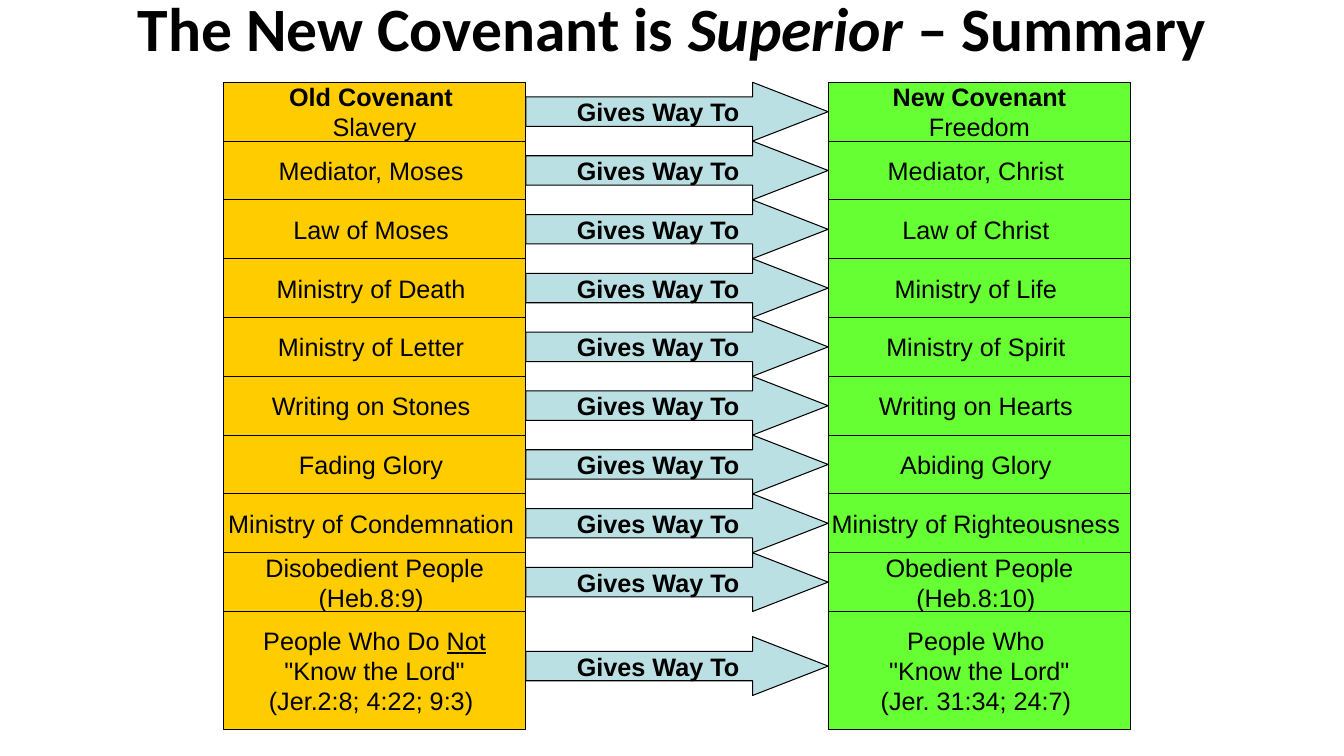
from pptx import Presentation
from pptx.dml.color import RGBColor
from pptx.enum.shapes import MSO_SHAPE
from pptx.enum.text import MSO_ANCHOR, PP_ALIGN
from pptx.util import Emu, Pt

RECTANGLE = MSO_SHAPE.RECTANGLE
RIGHT_ARROW = MSO_SHAPE.RIGHT_ARROW
MIDDLE = MSO_ANCHOR.MIDDLE
CENTER = PP_ALIGN.CENTER

BLACK = RGBColor(0x00, 0x00, 0x00)
GOLD = RGBColor(0xFF, 0xCC, 0x00)
GREEN = RGBColor(0x66, 0xFF, 0x33)
PALE_BLUE = RGBColor(0xBB, 0xE0, 0xE3)

EMU_PER_PX = 7620
SLIDE_WIDTH, SLIDE_HEIGHT = 1600, 900
TITLE_HEIGHT = 64
COLUMN_WIDTH = 360
OLD_LEFT = 266
ARROW_LEFT = OLD_LEFT + COLUMN_WIDTH
NEW_LEFT = ARROW_LEFT + COLUMN_WIDTH
TABLE_TOP = 98
ROW_HEIGHT = 70
LAST_ROW_HEIGHT = 2 * ROW_HEIGHT
LAST_ARROW_OFFSET = 30

PLAIN, BOLD, ITALIC, UNDERLINE = "plain", "bold", "italic", "underline"

TITLE = [("The New Covenant is ", PLAIN), ("Superior", ITALIC), (" – Summary", PLAIN)]
COVENANT_ROWS = [
    ([("Old Covenant \n", BOLD), ("Slavery", PLAIN)],
     [("New Covenant\n", BOLD), ("Freedom", PLAIN)]),
    ([("Mediator, Moses ", PLAIN)], [("Mediator, Christ ", PLAIN)]),
    ([("Law of Moses ", PLAIN)], [("Law of Christ ", PLAIN)]),
    ([("Ministry of Death ", PLAIN)], [("Ministry of Life ", PLAIN)]),
    ([("Ministry of Letter ", PLAIN)], [("Ministry of Spirit ", PLAIN)]),
    ([("Writing on Stones ", PLAIN)], [("Writing on Hearts ", PLAIN)]),
    ([("Fading Glory ", PLAIN)], [("Abiding Glory ", PLAIN)]),
    ([("Ministry of Condemnation ", PLAIN)], [("Ministry of Righteousness ", PLAIN)]),
    ([("Disobedient People\n(Heb.8:9) ", PLAIN)],
     [("Obedient People\n(Heb.8:10) ", PLAIN)]),
    ([("People Who Do ", PLAIN), ("Not\n", UNDERLINE),
      ('"Know the Lord"\n(Jer.2:8; 4:22; 9:3) ', PLAIN)],
     [('People Who \n"Know the Lord"\n(Jer. 31:34; 24:7) ', PLAIN)]),
]


class CovenantSlide:
    """Draws styled elements on the current slide, measured in px."""

    title_font, title_size = "Calibri", Pt(44)
    body_font, body_size = "Arial", Pt(18)
    line_width = Pt(0.75)

    def __init__(self, slide):
        self.slide = slide

    def scale(self, *lengths):
        return [Emu(length * EMU_PER_PX) for length in lengths]

    def add_text(self, shape, parts, font_name, size, bold, wrap):
        frame = shape.text_frame
        frame.word_wrap = wrap
        frame.vertical_anchor = MIDDLE
        paragraph = frame.paragraphs[0]
        paragraph.alignment = CENTER
        font = paragraph.font
        font.name, font.size, font.bold = font_name, size, bold
        font.color.rgb = BLACK
        for text, emphasis in parts:
            for index, line in enumerate(text.split("\n")):
                if index:
                    paragraph.add_line_break()
                if line:
                    run = paragraph.add_run()
                    run.text = line
                    if emphasis == BOLD:
                        run.font.bold = True
                    elif emphasis == ITALIC:
                        run.font.italic = True
                    elif emphasis == UNDERLINE:
                        run.font.underline = True

    def title(self, parts):
        box = self.slide.shapes.add_textbox(*self.scale(0, 0, SLIDE_WIDTH, TITLE_HEIGHT))
        self.add_text(box, parts, self.title_font, self.title_size, True, True)

    def block(self, kind, left, top, height, fill, parts, bold=False):
        shape = self.slide.shapes.add_shape(
            kind, *self.scale(left, top, COLUMN_WIDTH, height))
        shape.shadow.inherit = False
        shape.fill.solid()
        shape.fill.fore_color.rgb = fill
        shape.line.color.rgb = BLACK
        shape.line.width = self.line_width
        self.add_text(shape, parts, self.body_font, self.body_size, bold, False)
        return shape

    def cell(self, left, top, height, fill, parts):
        self.block(RECTANGLE, left, top, height, fill, parts)

    def arrow(self, top):
        shape = self.block(RIGHT_ARROW, ARROW_LEFT, top, ROW_HEIGHT, PALE_BLUE,
                           [("Gives Way To", PLAIN)], bold=True)
        shape.adjustments[0] = 0.5
        shape.adjustments[1] = 1.286


def main():
    presentation = Presentation()
    presentation.slide_width = Emu(SLIDE_WIDTH * EMU_PER_PX)
    presentation.slide_height = Emu(SLIDE_HEIGHT * EMU_PER_PX)
    covenant = CovenantSlide(presentation.slides.add_slide(presentation.slide_layouts[6]))

    covenant.title(TITLE)
    last = len(COVENANT_ROWS) - 1
    for index, (old, new) in enumerate(COVENANT_ROWS):
        top = TABLE_TOP + index * ROW_HEIGHT
        height = LAST_ROW_HEIGHT if index == last else ROW_HEIGHT
        covenant.cell(OLD_LEFT, top, height, GOLD, old)
        covenant.cell(NEW_LEFT, top, height, GREEN, new)
        covenant.arrow(top + LAST_ARROW_OFFSET if index == last else top)
    presentation.save("out.pptx")


if __name__ == "__main__":
    main()
